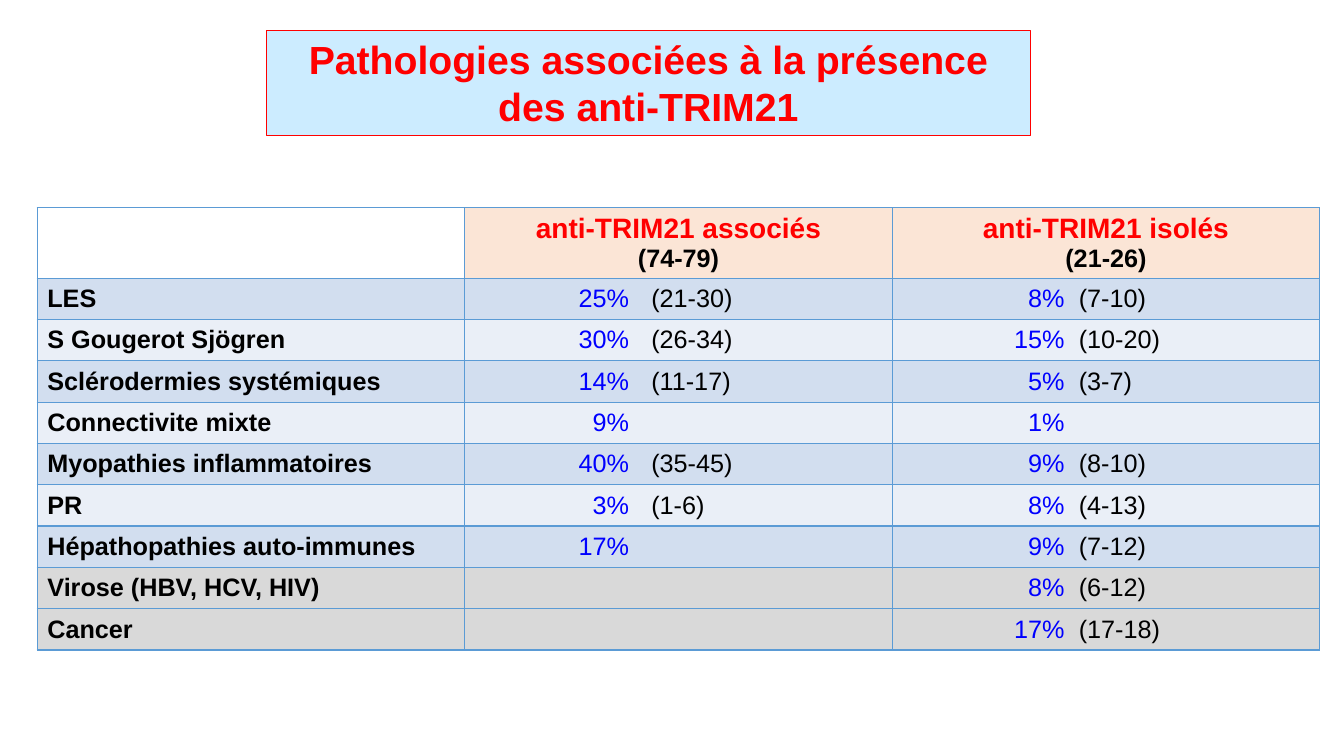
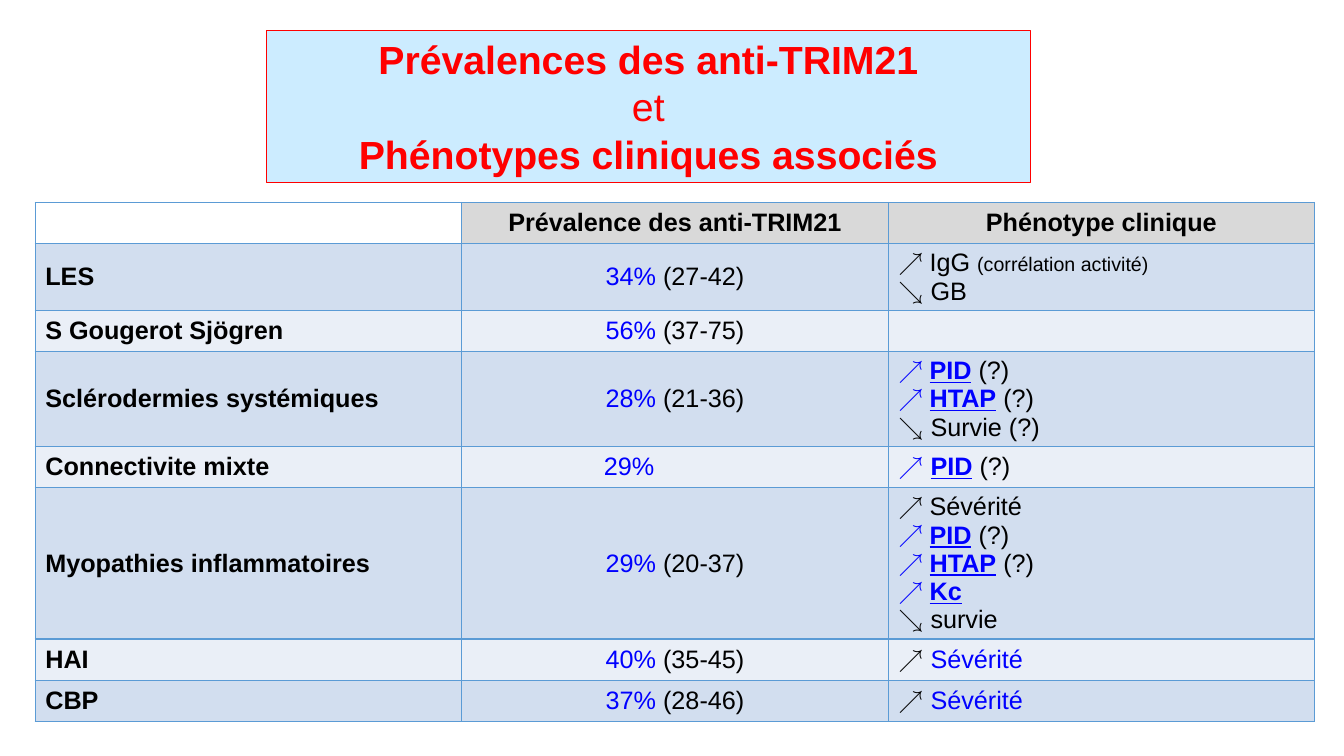
from pptx import Presentation
from pptx.dml.color import RGBColor
from pptx.enum.text import MSO_ANCHOR as Anchor, MSO_AUTO_SIZE as Fit, PP_ALIGN as Align
from pptx.oxml.ns import qn
from pptx.util import Inches, Pt
from lxml.etree import SubElement as sub, Element

RED = RGBColor(0xFF, 0x00, 0x00)
BLUE = RGBColor(0x00, 0x00, 0xFF)
BLACK = RGBColor(0x00, 0x00, 0x00)
WHITE = RGBColor(0xFF, 0xFF, 0xFF)
SKY = RGBColor(0xCC, 0xEC, 0xFF)
PEACH = RGBColor(0xFB, 0xE5, 0xD6)
GREY = RGBColor(0xD9, 0xD9, 0xD9)
DARK = RGBColor(0xD2, 0xDE, 0xEF)
LIGHT = RGBColor(0xEA, 0xEF, 0xF7)
EDGE = RGBColor(0x5B, 0x9B, 0xD5)

PLAIN = {}
BOLD = dict(bold=True)
RATE = dict(color=BLUE)
LINK = dict(color=BLUE, bold=True, under=True)
HEAD = dict(size=20, color=RED, bold=True)
TITLE = dict(size=28, color=RED)
SMALL = dict(size=14)


def write(para, text, size=18, color=BLACK, bold=False, under=False):
    run = para.add_run()
    run.text = text
    font = run.font
    font.name = "Arial"
    font.size = Pt(size)
    font.color.rgb = color
    font.bold = bold
    font.underline = under


class Deck:
    def __init__(self):
        self.show = Presentation()
        self.show.slide_width = Inches(13.33)
        self.show.slide_height = Inches(7.5)
        self.slide = None

    def add(self):
        self.slide = self.show.slides.add_slide(self.show.slide_layouts[5])

    def title(self, lines, high):
        box = self.slide.shapes.title
        box.left, box.top = Inches(2.64), Inches(0.3)
        box.width, box.height = Inches(7.58), Inches(high)
        box.fill.solid()
        box.fill.fore_color.rgb = SKY
        box.line.color.rgb = RED
        box.line.width = Pt(0.75)
        frame = box.text_frame
        frame.word_wrap = True
        frame.auto_size = Fit.NONE
        frame.vertical_anchor = Anchor.MIDDLE
        for text, bold in lines:
            self.line(frame, [(text, dict(TITLE, bold=bold))], Align.CENTER)

    def table(self, left, top, width, highs):
        frame = self.slide.shapes.add_table(
            len(highs), 3, Inches(left), Inches(top), Inches(3 * width), Inches(sum(highs)))
        grid = frame.table
        grid.first_row = grid.horz_banding = False
        for col in grid.columns:
            col.width = Inches(width)
        for row, high in zip(grid.rows, highs):
            row.height = Inches(high)
        return grid

    def cell(self, cell, fill, lines=(), **form):
        cell.fill.solid()
        cell.fill.fore_color.rgb = fill
        cell.vertical_anchor = Anchor.MIDDLE
        props = cell._tc.get_or_add_tcPr()
        for spot, side in enumerate("LRTB"):
            edge = Element(qn("a:ln" + side), w=str(Pt(1)))
            paint = sub(edge, qn("a:solidFill"))
            sub(paint, qn("a:srgbClr"), val=str(EDGE))
            props.insert(spot, edge)
        for runs in lines:
            self.line(cell.text_frame, runs, **form)

    def line(self, frame, runs, align=Align.LEFT, tabs=(), left=0, mark=False):
        para = frame.paragraphs[0]
        if para.runs:
            para = frame.add_paragraph()
        para.alignment = align
        props = para._p.get_or_add_pPr()
        if left:
            props.set("marL", str(Inches(left)))
        if mark and runs[0][0][0] not in "↗↘":
            props.set("marL", str(Inches(0.31)))
            props.set("indent", str(-Inches(0.31)))
            sub(props, qn("a:buFont"), typeface="Arial")
            sub(props, qn("a:buChar"), char="↗")
        if tabs:
            stops = sub(props, qn("a:tabLst"))
            for place, kind in zip(tabs, "rl"):
                sub(stops, qn("a:tab"), pos=str(Inches(place)), algn=kind)
        for text, form in runs:
            write(para, text, **form)


def band(row):
    return DARK if row % 2 else LIGHT


def links(deck):
    rows = [
        ("LES", ("25%", "(21-30)"), ("8%", "(7-10)")),
        ("S Gougerot Sjögren", ("30%", "(26-34)"), ("15%", "(10-20)")),
        ("Sclérodermies systémiques", ("14%", "(11-17)"), ("5%", "(3-7)")),
        ("Connectivite mixte", ("9%",), ("1%",)),
        ("Myopathies inflammatoires", ("40%", "(35-45)"), ("9%", "(8-10)")),
        ("PR", ("3%", "(1-6)"), ("8%", "(4-13)")),
        ("Hépathopathies auto-immunes", ("17%",), ("9%", "(7-12)")),
        ("Virose (HBV, HCV, HIV)", (), ("8%", "(6-12)")),
        ("Cancer", (), ("17%", "(17-18)")),
    ]
    heads = [("anti-TRIM21 associés", "(74-79)"), ("anti-TRIM21 isolés", "(21-26)")]
    stops = [(1.53, 1.75), (1.61, 1.75)]
    deck.add()
    deck.title([("Pathologies associées à la présence des anti-TRIM21", True)], 1.04)
    grid = deck.table(0.37, 2.06, 4.24, [0.7] + [0.41] * len(rows))
    deck.cell(grid.cell(0, 0), WHITE)
    for col, (name, span) in enumerate(heads, 1):
        deck.cell(grid.cell(0, col), PEACH, [[(name, HEAD)], [(span, BOLD)]], align=Align.CENTER)
    for row, (name, *rates) in enumerate(rows, 1):
        fill = band(row) if row < 8 else GREY
        deck.cell(grid.cell(row, 0), fill, [[(name, BOLD)]])
        for col, (rate, tabs) in enumerate(zip(rates, stops), 1):
            runs = [("\t" + text, form) for text, form in zip(rate, (RATE, PLAIN))]
            deck.cell(grid.cell(row, col), fill, [runs] if runs else [], tabs=tabs)


def signs(deck):
    lung = [("PID", LINK), (" ", RATE), ("(?)", PLAIN)]
    heart = [("HTAP", LINK), (" ", RATE), ("(?)", PLAIN)]
    grave = [("↗ ", PLAIN), ("Sévérité", RATE)]
    rows = [
        ("LES", "34%", " (27-42)",
         [[("IgG ", PLAIN), ("(corrélation activité)", SMALL)], [("↘ GB", PLAIN)]]),
        ("S Gougerot Sjögren", "56%", " (37-75)", []),
        ("Sclérodermies systémiques", "28%", " (21-36)",
         [lung, heart, [("↘ Survie (?)", PLAIN)]]),
        ("Connectivite mixte", "29%", "", [[("↗ ", RATE)] + lung]),
        ("Myopathies inflammatoires", "29%", " (20-37)",
         [[("Sévérité", PLAIN)], lung, heart, [("Kc", LINK)], [("↘ survie", PLAIN)]]),
        ("HAI", "40%", " (35-45)", [grave]),
        ("CBP", "37%", " (28-46)", [grave]),
    ]
    deck.add()
    deck.title([("Prévalences des anti-TRIM21", True), ("et", False),
                ("Phénotypes cliniques associés", True)], 1.51)
    highs = [max(0.41, 0.1 + 0.28 * len(row[3])) for row in rows]
    grid = deck.table(0.35, 2.01, 4.23, [0.41] + highs)
    deck.cell(grid.cell(0, 0), WHITE)
    for col, name in enumerate(("Prévalence des anti-TRIM21", "Phénotype clinique"), 1):
        deck.cell(grid.cell(0, col), GREY, [[(name, BOLD)]], align=Align.CENTER)
    for row, (name, rate, span, notes) in enumerate(rows, 1):
        fill = band(row)
        deck.cell(grid.cell(row, 0), fill, [[(name, BOLD)]])
        if span:
            runs, form = [(rate, RATE), (span, PLAIN)], dict(align=Align.CENTER)
        else:
            runs, form = [(rate, RATE)], dict(left=1.31)
        deck.cell(grid.cell(row, 1), fill, [runs], **form)
        deck.cell(grid.cell(row, 2), fill, notes, mark=True)


def main():
    deck = Deck()
    links(deck)
    signs(deck)
    deck.show.save("out.pptx")


if __name__ == "__main__":
    main()
